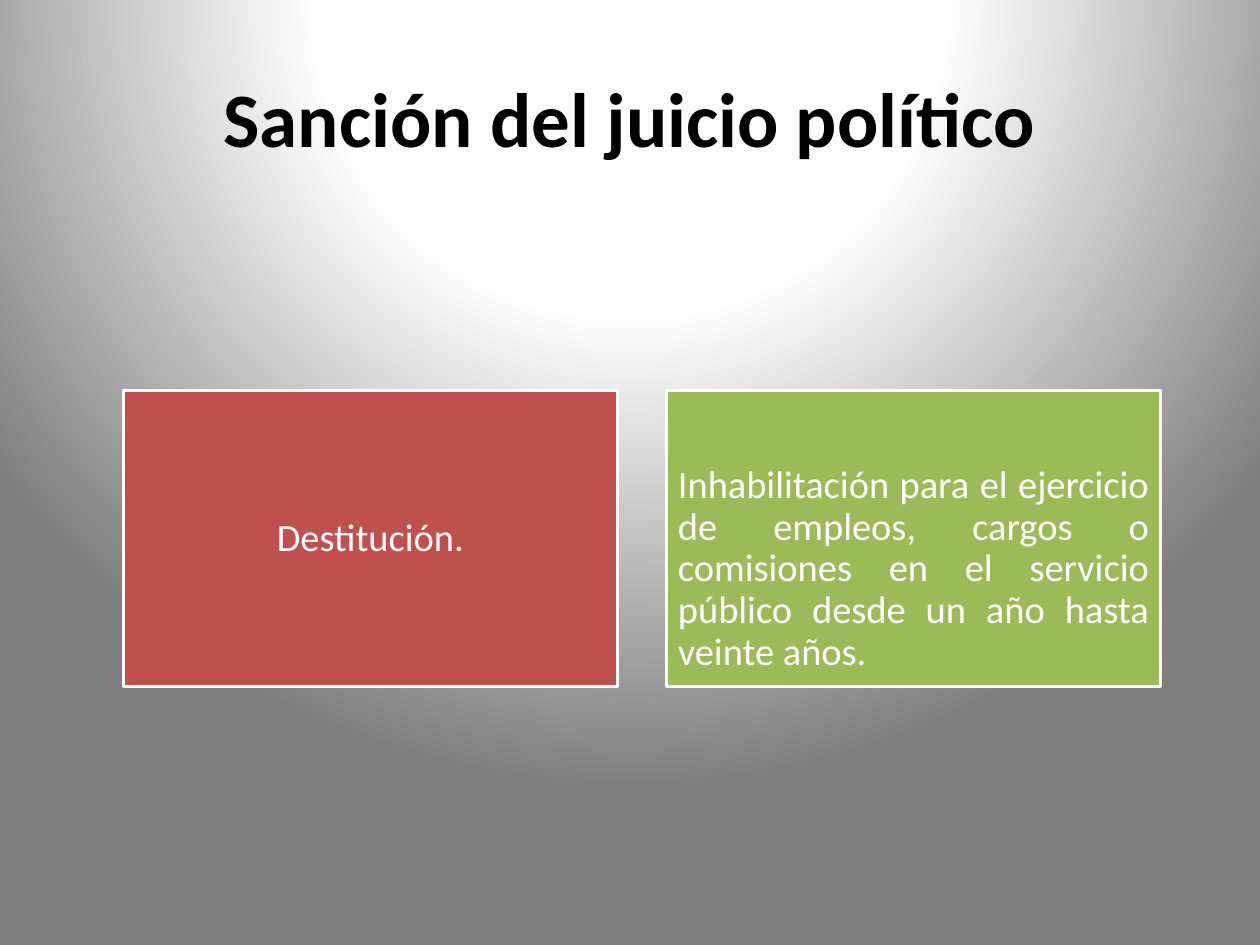
from lxml import etree
from pptx import Presentation, util as u
from pptx.dml.color import RGBColor
from pptx.enum import shapes, text
from pptx.oxml.ns import qn

deck = Presentation()
deck.slide_width, deck.slide_height = u.Inches(10), u.Inches(7.5)
slide = deck.slides.add_slide(deck.slide_layouts[5])


def tint(code):
    return RGBColor.from_string(code)


def write(frame, words, align, look):
    frame.word_wrap = True
    frame.vertical_anchor = text.MSO_ANCHOR.MIDDLE
    para = frame.paragraphs[0]
    para.alignment = align
    run = para.add_run()
    run.text = words
    run.font.color.rgb = tint(look["color"])
    for key in ("name", "size", "bold"):
        setattr(run.font, key, look[key])
    return para


# Background: round glow centred above the slide
fill = slide.background.fill
fill.gradient()
grad = slide.background._cSld.find(".//" + qn("a:gradFill"))
for part in list(grad):
    grad.remove(part)
stops = etree.SubElement(grad, qn("a:gsLst"))
for pos, code in ((0, "FFFFFF"), (40, "FEFEFE"), (100, "7F7F7F")):
    stop = etree.SubElement(stops, qn("a:gs"), pos=str(pos * 1000))
    etree.SubElement(stop, qn("a:srgbClr"), val=code)
glow = etree.SubElement(grad, qn("a:path"), path="circle")
etree.SubElement(glow, qn("a:fillToRect"), l="50000", t="-80000", r="50000", b="180000")

# Title
title = slide.shapes.title
place = {"left": 0.5, "top": 0.3, "width": 9, "height": 1.25}
for key, size in place.items():
    setattr(title, key, u.Inches(size))
write(title.text_frame, "Sanción del juicio político", text.PP_ALIGN.CENTER,
      {"name": "Calibri", "size": u.Pt(44), "bold": True, "color": "000000"})

# Two sanction boxes; the second has its text set lower
left, top, wide, high, gap = 0.98, 3.1, 3.92, 2.35, 0.39
look = {"name": "Calibri", "size": u.Pt(22), "bold": False, "color": "FFFFFF"}
cards = (
    ("Destitución.", "C0504D", text.PP_ALIGN.CENTER, 0.09),
    ("Inhabilitación para el ejercicio de empleos, cargos o comisiones en el "
     "servicio público desde un año hasta veinte años.",
     "9BBB59", text.PP_ALIGN.JUSTIFY, 0.58),
)
for col, (words, code, align, inset) in enumerate(cards):
    box = slide.shapes.add_shape(
        shapes.MSO_SHAPE.RECTANGLE, u.Inches(left + col * (wide + gap)),
        u.Inches(top), u.Inches(wide), u.Inches(high))
    box.shadow.inherit = False
    box.fill.solid()
    box.fill.fore_color.rgb = tint(code)
    box.line.color.rgb = tint("FFFFFF")
    box.line.width = u.Pt(2)
    frame = box.text_frame
    for side in ("left", "right", "bottom"):
        setattr(frame, "margin_" + side, u.Inches(0.09))
    frame.margin_top = u.Inches(inset)
    write(frame, words, align, look).line_spacing = 0.9

deck.save("out.pptx")
